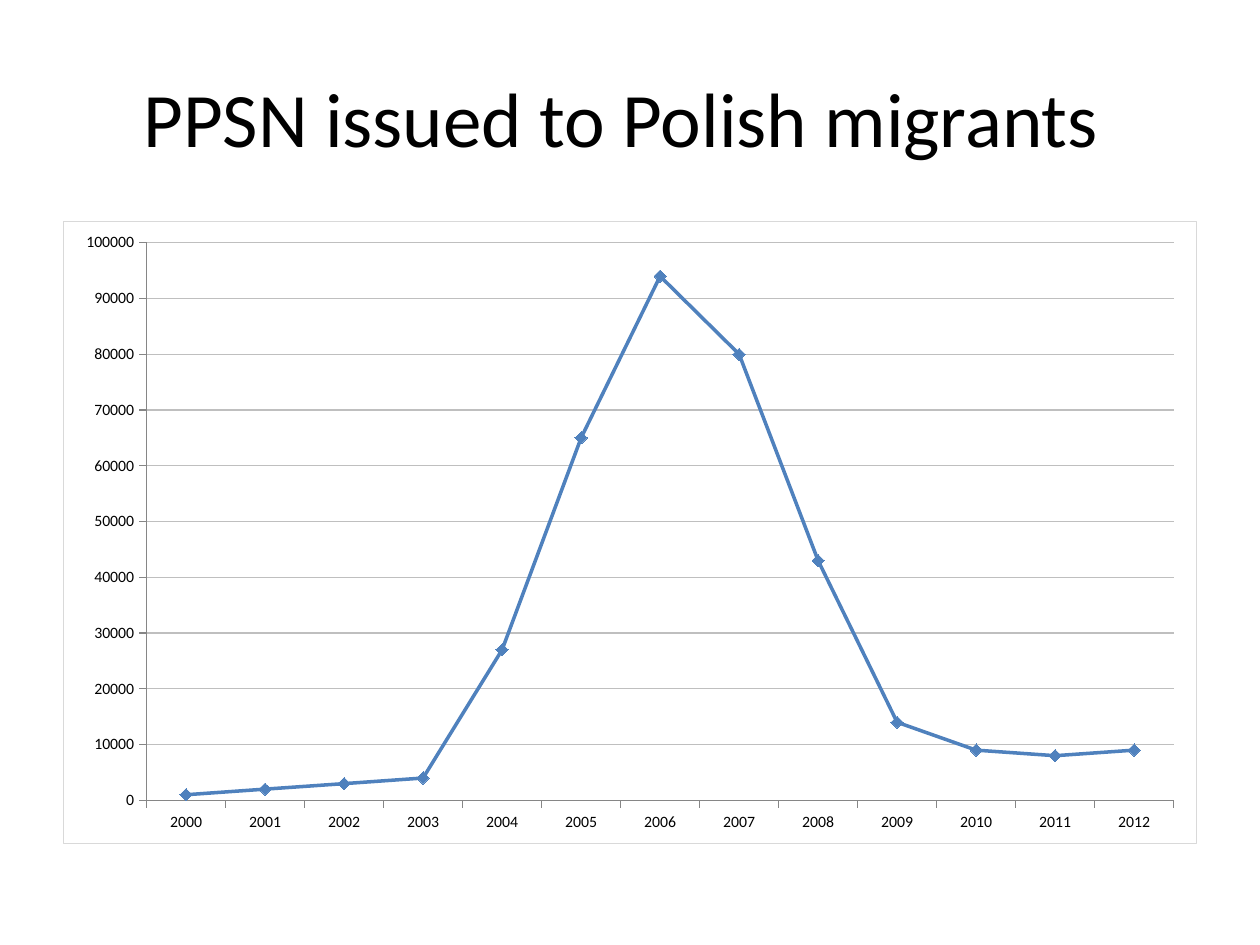
from lxml import etree
from pptx import Presentation
from pptx.chart.data import CategoryChartData
from pptx.dml.color import RGBColor
from pptx.enum import chart as kinds, text
from pptx.oxml import ns
from pptx.util import Inches, Pt

COLORS = {"text": "000000", "line": "4F81BD", "grid": "BFBFBF",
          "axis": "868686", "border": "D9D9D9"}
FONT = "Calibri"
YEARS = [str(year) for year in range(2000, 2013)]
ISSUED = [1000, 2000, 3000, 4000, 27000, 65000, 94000,
          80000, 43000, 14000, 9000, 8000, 9000]


def apply_format(target, values):
    for name, value in values.items():
        setattr(target, name, value)


def format_font(font, size):
    apply_format(font, {"name": FONT, "size": Pt(size), "bold": False})
    font.color.rgb = RGBColor.from_string(COLORS["text"])


def format_line(line, color, width):
    line.color.rgb = RGBColor.from_string(COLORS[color])
    line.width = Pt(width)


def add_title(page, box, wording):
    title = page.shapes.title
    apply_format(title, dict(zip(("left", "top", "width", "height"), box)))
    frame = title.text_frame
    frame.text = wording
    apply_format(frame, {"word_wrap": True,
                         "vertical_anchor": text.MSO_ANCHOR.MIDDLE})
    para = frame.paragraphs[0]
    para.alignment = text.PP_ALIGN.CENTER
    format_font(para.runs[0].font, 44)


def add_border(chart, color, width):
    """Outline the chart area, which has no public python-pptx method."""
    area = etree.Element(ns.qn("c:spPr"))
    outline = etree.SubElement(area, ns.qn("a:ln"), w=str(Pt(width)))
    fill = etree.SubElement(outline, ns.qn("a:solidFill"))
    etree.SubElement(fill, ns.qn("a:srgbClr"), val=COLORS[color])
    chart.element.find(ns.qn("c:chart")).addnext(area)


def add_line_chart(page, box):
    data = CategoryChartData(number_format="0")
    data.categories = YEARS
    data.add_series("Series 1", ISSUED)
    chart = page.shapes.add_chart(
        kinds.XL_CHART_TYPE.LINE_MARKERS, *box, data).chart
    apply_format(chart, {"has_legend": False, "has_title": False})
    format_font(chart.font, 10)
    add_border(chart, "border", 0.75)
    chart.plots[0].vary_by_categories = False

    for axis in (chart.category_axis, chart.value_axis):
        apply_format(axis, {"major_tick_mark": kinds.XL_TICK_MARK.OUTSIDE,
                            "minor_tick_mark": kinds.XL_TICK_MARK.NONE})
        format_font(axis.tick_labels.font, 9)
        format_line(axis.format.line, "axis", 0.75)
    scale = chart.value_axis
    apply_format(scale, {"minimum_scale": 0, "maximum_scale": 100000,
                         "major_unit": 10000, "has_major_gridlines": True})
    apply_format(scale.tick_labels, {"number_format": "0",
                                     "number_format_is_linked": False})
    format_line(scale.major_gridlines.format.line, "grid", 0.75)

    series = chart.plots[0].series[0]
    series.smooth = False
    format_line(series.format.line, "line", 2)
    marker = series.marker
    apply_format(marker, {"style": kinds.XL_MARKER_STYLE.DIAMOND, "size": 7})
    marker.format.fill.solid()
    marker.format.fill.fore_color.rgb = RGBColor.from_string(COLORS["line"])
    format_line(marker.format.line, "line", 0.75)


def main():
    deck = Presentation()
    apply_format(deck, {"slide_width": Inches(10), "slide_height": Inches(7.5)})
    page = deck.slides.add_slide(deck.slide_layouts[5])
    left, width = Inches(0.5), Inches(9)
    add_title(page, (left, Inches(0.3), width, Inches(1.25)),
              "PPSN issued to Polish migrants ")
    add_line_chart(page, (left, Inches(1.75), width, Inches(4.95)))
    deck.save("out.pptx")


if __name__ == "__main__":
    main()
